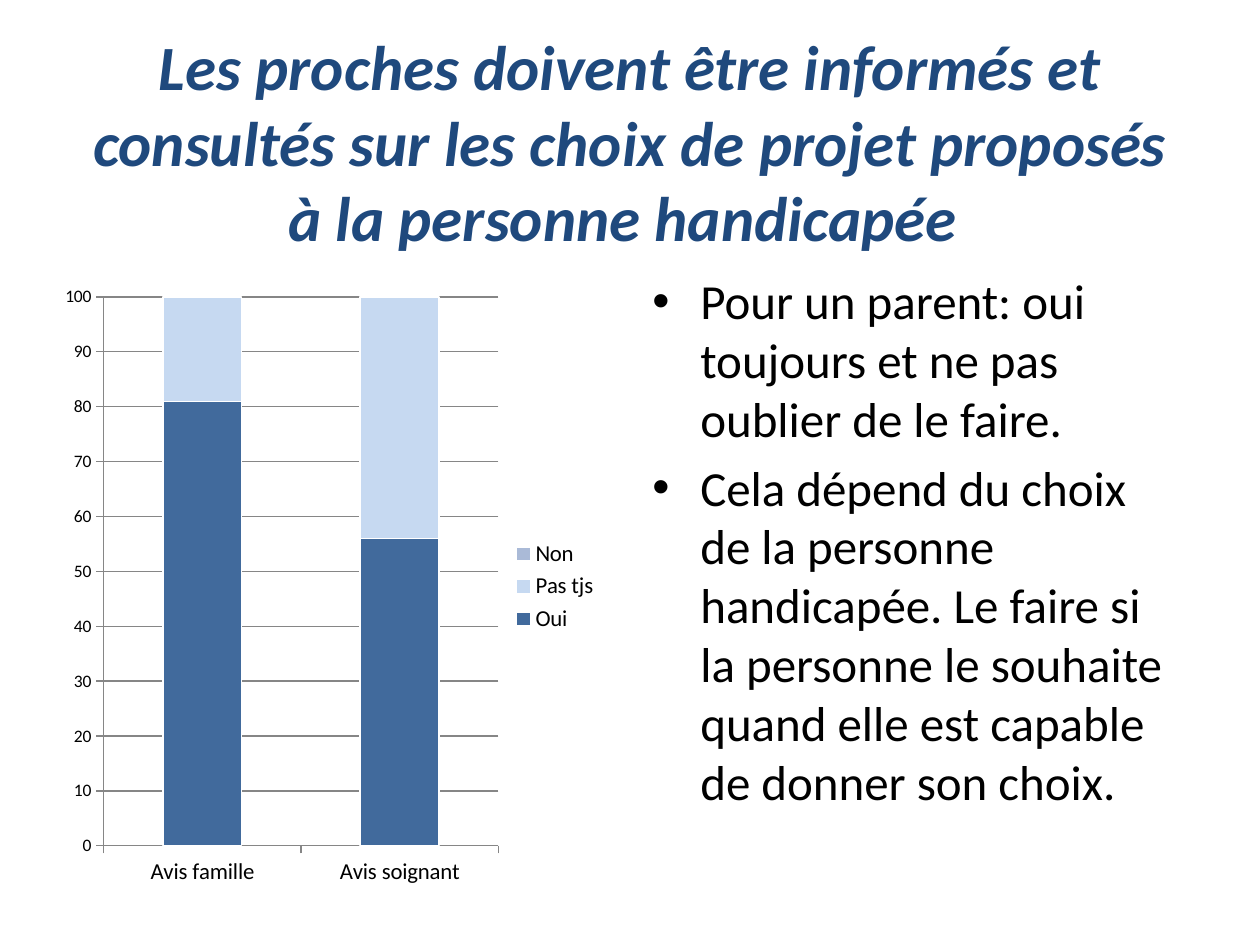
from dataclasses import dataclass

from lxml.etree import SubElement
from pptx import Presentation
from pptx.chart.data import CategoryChartData
from pptx.dml.color import RGBColor
from pptx.enum.chart import XL_CHART_TYPE, XL_LEGEND_POSITION, XL_TICK_MARK
from pptx.enum.text import MSO_ANCHOR, PP_ALIGN
from pptx.oxml.ns import qn
from pptx.util import Inches, Pt


@dataclass(frozen=True)
class Theme:
    """Colours and type sizes of the slide."""
    font: str = "Calibri"
    title: RGBColor = RGBColor(0x1F, 0x49, 0x7D)
    text: RGBColor = RGBColor(0, 0, 0)
    grid: RGBColor = RGBColor(0x86, 0x86, 0x86)
    outline: RGBColor = RGBColor(0xFF, 0xFF, 0xFF)
    answers: tuple = (
        RGBColor(0x41, 0x6A, 0x9C),
        RGBColor(0xC6, 0xD9, 0xF1),
        RGBColor(0xAA, 0xBA, 0xD7),
    )
    title_size: Pt = Pt(36)
    body_size: Pt = Pt(28)
    label_size: Pt = Pt(13)
    tick_size: Pt = Pt(10)


class SlideBuilder:
    """Adds styled elements to the current slide."""

    def __init__(self, slide, theme):
        self.slide = slide
        self.theme = theme

    def style_font(self, font, size, color):
        font.name = self.theme.font
        font.size = size
        font.color.rgb = color

    def add_title(self, wording, left, top, width, height):
        title = self.slide.shapes.title
        title.left, title.top = Inches(left), Inches(top)
        title.width, title.height = Inches(width), Inches(height)
        title.text_frame.text = wording
        title.text_frame.vertical_anchor = MSO_ANCHOR.MIDDLE
        paragraph = title.text_frame.paragraphs[0]
        paragraph.alignment = PP_ALIGN.CENTER
        self.style_font(paragraph.font, self.theme.title_size, self.theme.title)
        paragraph.font.bold = paragraph.font.italic = True

    def add_bullets(self, opinions, left, top, width, height):
        frame = self.slide.shapes.add_textbox(
            Inches(left), Inches(top), Inches(width), Inches(height)
        ).text_frame
        frame.word_wrap = True
        frame.text = "\n".join(opinions)
        indent = Inches(0.38)
        for paragraph in frame.paragraphs:
            paragraph.space_before = Pt(5.6)
            self.style_font(paragraph.font, self.theme.body_size, self.theme.text)
            properties = paragraph._p.get_or_add_pPr()
            properties.set("marL", str(indent))
            properties.set("indent", str(-indent))
            bullet_font = SubElement(properties, qn("a:buFont"))
            bullet_font.set("typeface", "Arial")
            SubElement(properties, qn("a:buChar")).set("char", "•")
            properties.append(properties.find(qn("a:defRPr")))

    def add_stacked_chart(self, categories, answers, left, top, width, height):
        chart_data = CategoryChartData()
        chart_data.categories = categories
        for answer, shares in answers.items():
            chart_data.add_series(answer, shares)
        chart = self.slide.shapes.add_chart(
            XL_CHART_TYPE.COLUMN_STACKED,
            Inches(left), Inches(top), Inches(width), Inches(height), chart_data
        ).chart
        chart.has_title = False
        self.style_font(chart.font, self.theme.tick_size, self.theme.text)

        plot = chart.plots[0]
        plot.vary_by_categories = False
        plot.gap_width = 150
        plot.overlap = 100
        for series, color in zip(plot.series, self.theme.answers):
            series.format.fill.solid()
            series.format.fill.fore_color.rgb = color
            series.format.line.color.rgb = self.theme.outline
            series.format.line.width = Pt(0.75)

        scale = chart.value_axis
        scale.minimum_scale, scale.maximum_scale = 0, 100
        scale.major_unit = 10
        scale.has_major_gridlines = True
        for axis in (chart.category_axis, scale):
            axis.major_tick_mark = XL_TICK_MARK.OUTSIDE
            axis.minor_tick_mark = XL_TICK_MARK.NONE
        for line in (
            chart.category_axis.format.line,
            scale.format.line,
            scale.major_gridlines.format.line,
        ):
            line.color.rgb = self.theme.grid
            line.width = Pt(0.75)

        chart.has_legend = True
        chart.legend.position = XL_LEGEND_POSITION.RIGHT
        chart.legend.include_in_layout = False
        for font in (chart.category_axis.tick_labels.font, chart.legend.font):
            self.style_font(font, self.theme.label_size, self.theme.text)


def main():
    presentation = Presentation()
    presentation.slide_width, presentation.slide_height = Inches(10), Inches(7.5)
    slide = presentation.slides.add_slide(presentation.slide_layouts[5])
    builder = SlideBuilder(slide, Theme())
    builder.add_title(
        "Les proches doivent être informés et consultés sur les choix de projet "
        "proposés à la personne handicapée ",
        0.5, 0.3, 9, 1.64,
    )
    builder.add_bullets(
        [
            "Pour un parent: oui toujours et ne pas oublier de le faire.",
            "Cela dépend du choix de la personne handicapée. Le faire si la personne "
            "le souhaite quand elle est capable de donner son choix.",
        ],
        5.08, 2.1, 4.42, 4.95,
    )
    builder.add_stacked_chart(
        ["Avis famille", "Avis soignant"],
        {"Oui": (81, 56), "Pas tjs": (19, 44), "Non": (0, 0)},
        0.43, 2.18, 4.42, 4.95,
    )
    presentation.save("out.pptx")


if __name__ == "__main__":
    main()
